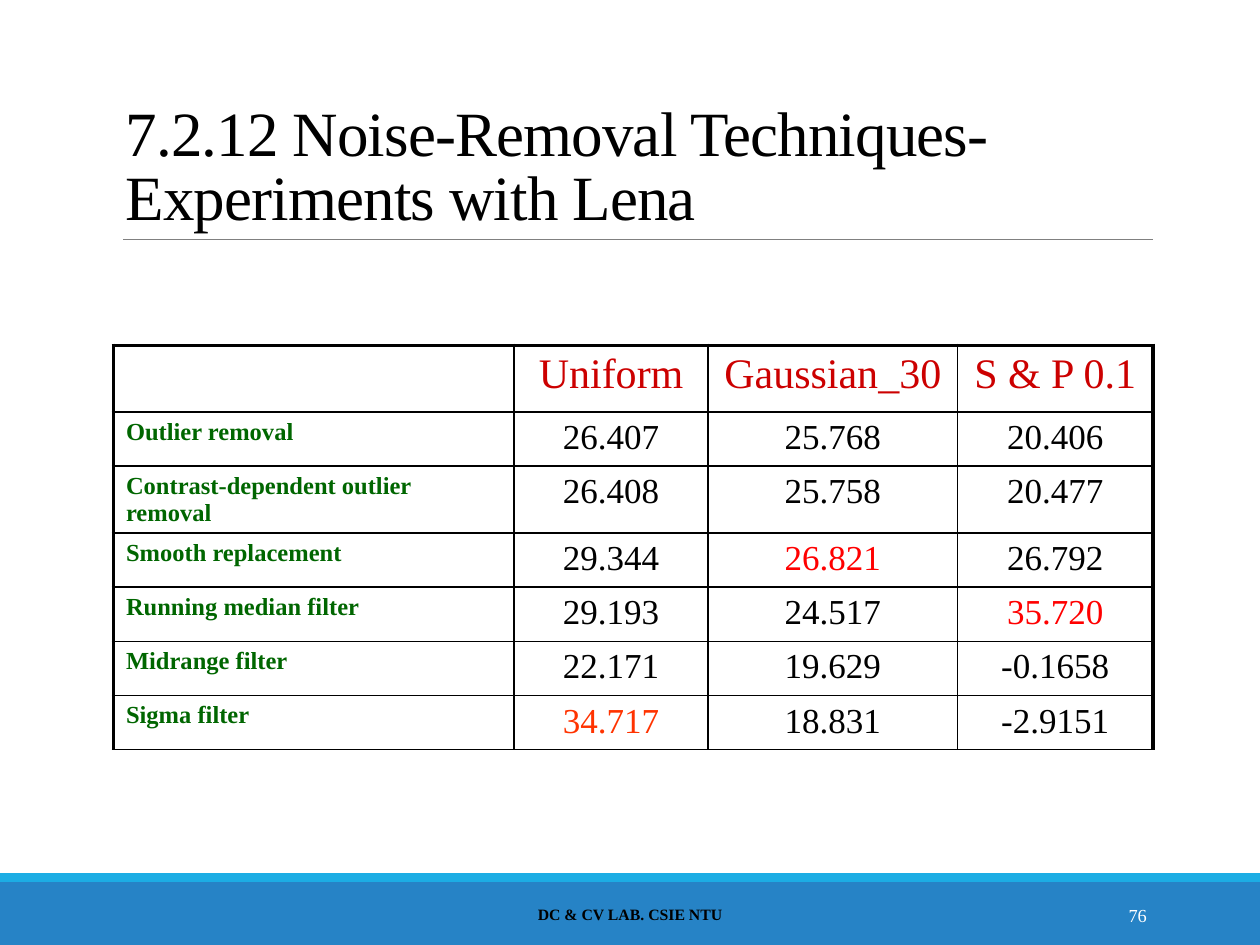
from dataclasses import dataclass

from lxml import etree
from pptx import Presentation
from pptx.dml.color import RGBColor
from pptx.enum.shapes import MSO_CONNECTOR, MSO_SHAPE
from pptx.enum.text import MSO_ANCHOR, PP_ALIGN
from pptx.oxml.ns import qn
from pptx.util import Inches, Pt

LEFT, MID, RIGHT = PP_ALIGN.LEFT, PP_ALIGN.CENTER, PP_ALIGN.RIGHT
LOW, CENTER = MSO_ANCHOR.BOTTOM, MSO_ANCHOR.MIDDLE
RECT, LINE = MSO_SHAPE.RECTANGLE, MSO_CONNECTOR.STRAIGHT
FONT = "Times New Roman"
BLACK, WHITE, RED, GREEN = "000000", "FFFFFF", "CC0000", "006600"
THIN, THICK = 1, 2.25


@dataclass
class Band:
    top: float
    height: float
    fill: str


@dataclass
class Label:
    text: str
    box: tuple[float, float, float, float]
    anchor: MSO_ANCHOR
    style: dict


BANDS = [Band(7, 0.5, "2683C6"), Band(6.93, 0.07, "1CADE4")]

LABELS = [
    Label("7.2.12 Noise-Removal Techniques-Experiments with Lena",
          (0.9, 0.31, 8.25, 1.59), LOW,
          dict(size=36, space=0.85, track=-50)),
    Label("DC & CV LAB. CSIE NTU", (3.02, 7.06, 3.96, 0.4), CENTER,
          dict(size=9, bold=True, align=MID)),
    Label("76", (8.12, 7.06, 1.08, 0.4), CENTER,
          dict(size=10.5, color=WHITE, align=RIGHT)),
]

ROWS = [
    ("", "Uniform", "Gaussian_30", "S & P 0.1"),
    ("Outlier removal", "26.407", "25.768", "20.406"),
    ("Contrast-dependent outlier removal", "26.408", "25.758", "20.477"),
    ("Smooth replacement", "29.344", "26.821", "26.792"),
    ("Running median filter", "29.193", "24.517", "35.720"),
    ("Midrange filter", "22.171", "19.629", "-0.1658"),
    ("Sigma filter", "34.717", "18.831", "-2.9151"),
]
BEST = {"26.821": "FF0000", "35.720": "FF0000", "34.717": "FF3300"}
WIDTHS = [3.18, 1.54, 1.98, 1.55]
HEAD, BODY = 0.53, 0.43


def rgb(code: str) -> RGBColor:
    return RGBColor.from_string(code)


def write(frame, text: str, *, size: float, color: str = BLACK,
          bold: bool = False, align: PP_ALIGN = LEFT,
          space: float = 1, track: int = 0) -> None:
    frame.word_wrap = True
    para = frame.paragraphs[0]
    para.alignment, para.line_spacing = align, space
    run = para.add_run()
    run.text = text
    font = run.font
    font.name, font.size, font.bold = FONT, Pt(size), bold
    font.color.rgb = rgb(color)
    if track:
        font._element.set("spc", str(track))


def draw_band(slide, band: Band) -> None:
    bar = slide.shapes.add_shape(RECT, 0, Inches(band.top), Inches(10),
                                 Inches(band.height))
    bar.shadow.inherit = False
    bar.fill.solid()
    bar.fill.fore_color.rgb = rgb(band.fill)
    bar.line.fill.background()


def draw_rule(slide) -> None:
    rule = slide.shapes.add_connector(LINE, Inches(0.98), Inches(1.9),
                                      Inches(9.15), Inches(1.9))
    rule.line.color.rgb = rgb("808080")
    rule.line.width = Pt(0.5)
    etree.SubElement(rule._element.spPr, qn("a:effectLst"))


def draw_label(slide, label: Label) -> None:
    box = slide.shapes.add_textbox(*map(Inches, label.box))
    box.text_frame.vertical_anchor = label.anchor
    write(box.text_frame, label.text, **label.style)


def set_edges(cell, edges: dict[str, float]) -> None:
    props = cell._tc.get_or_add_tcPr()
    for spot, (side, width) in enumerate(edges.items()):
        edge = etree.Element(qn(f"a:ln{side}"), w=str(Pt(width)))
        fill = etree.SubElement(edge, qn("a:solidFill"))
        etree.SubElement(fill, qn("a:srgbClr"), val=BLACK)
        props.insert(spot, edge)


def cell_style(row: int, col: int, text: str) -> dict:
    if row == 0:
        return dict(size=24, color=RED, align=MID)
    if col == 0:
        return dict(size=14, color=GREEN, bold=True)
    return dict(size=20, color=BEST.get(text, BLACK), align=MID)


def draw_table(slide) -> None:
    high = HEAD + BODY * (len(ROWS) - 1)
    table = slide.shapes.add_table(
        len(ROWS), len(WIDTHS), Inches(0.9), Inches(2.74),
        Inches(sum(WIDTHS)), Inches(high)).table
    table.first_row = table.horz_banding = False
    for col, width in enumerate(WIDTHS):
        table.columns[col].width = Inches(width)
    last = len(WIDTHS) - 1
    for row, texts in enumerate(ROWS):
        table.rows[row].height = Inches(BODY if row else HEAD)
        for col, text in enumerate(texts):
            cell = table.cell(row, col)
            cell.fill.background()
            if text:
                write(cell.text_frame, text, **cell_style(row, col, text))
            set_edges(cell, {
                "L": THICK if col == 0 else THIN,
                "R": THICK if col == last else THIN,
                "T": THICK if row == 0 else THIN,
                "B": THIN,
            })


def main() -> None:
    deck = Presentation()
    deck.slide_width, deck.slide_height = Inches(10), Inches(7.5)
    slide = deck.slides.add_slide(deck.slide_layouts[6])

    # Footer bands and title rule
    for band in BANDS:
        draw_band(slide, band)
    draw_rule(slide)

    # Results, then title and footer text
    draw_table(slide)
    for label in LABELS:
        draw_label(slide, label)

    deck.save("out.pptx")


if __name__ == "__main__":
    main()
